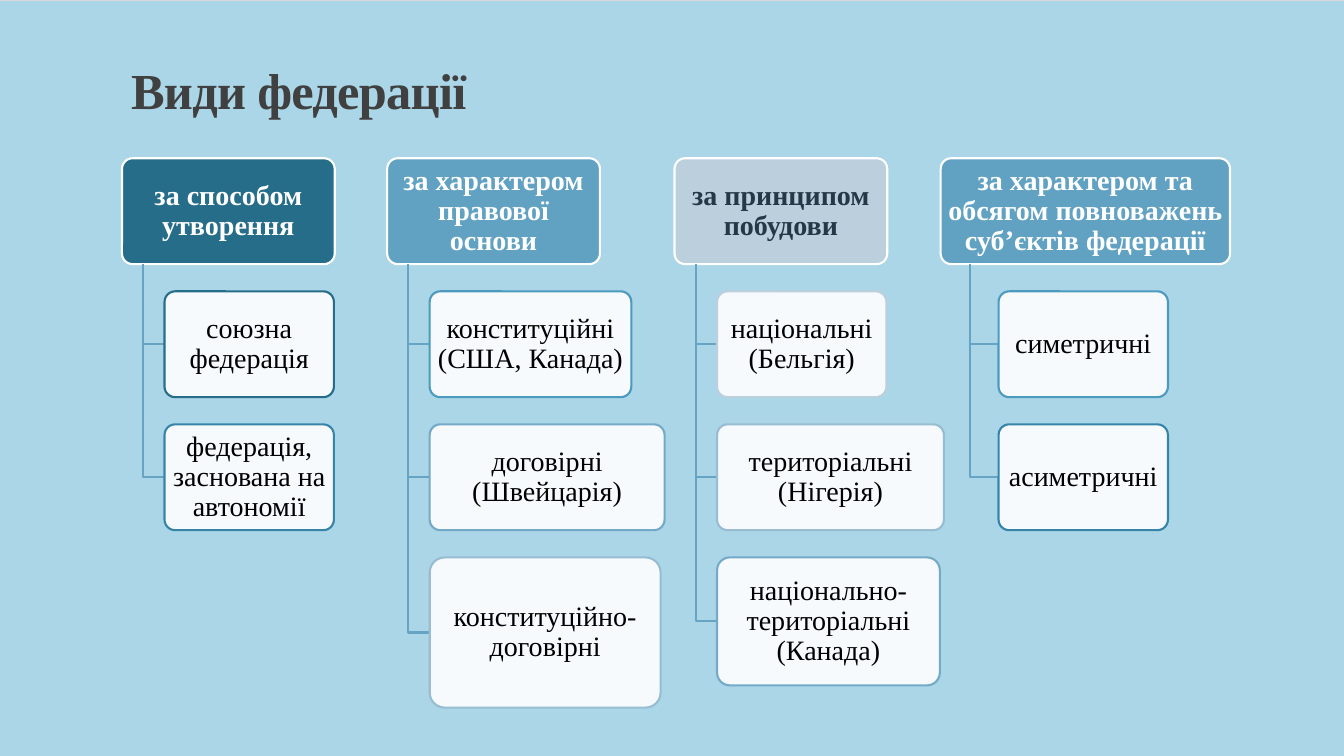
"""Build the slide on the kinds of federation: four headed branches of cards."""
import dataclasses

import lxml.etree
import pptx
import pptx.dml.color
import pptx.enum.dml
import pptx.enum.shapes
import pptx.enum.text
import pptx.oxml.ns
import pptx.util

Inches = pptx.util.Inches
Color = pptx.dml.color.RGBColor.from_string


@dataclasses.dataclass(frozen=True)
class Theme:
    font: str = "Times New Roman"
    title_size: int = 36
    card_size: int = 20
    line_width: float = 1.5
    background: str = "AAD6E7"
    background_lines: str = "D9D9D9"
    title: str = "404040"
    white: str = "FFFFFF"
    black: str = "000000"
    navy: str = "253848"
    elbow: str = "67A3C2"
    teal: str = "266D8A"
    deep: str = "3685A9"
    bright: str = "4D9ABF"
    blue: str = "61A2C3"
    soft: str = "74AAC7"
    pale: str = "98BCD1"
    mist: str = "BBCFDD"


theme = Theme()

TOP, ROW, HEIGHT = 1.57, 1.32, 1.05
HEADER_WIDTH, CARD_WIDTH = 2 * HEIGHT + 0.01, 1.6 * HEIGHT
STEM_SHARE, INDENT_SHARE = 0.1, 0.2

# Branch: left, width, fill, text colour, heading, cards (text, line, width, height)
branches = [
    (1.21, HEADER_WIDTH, theme.teal, theme.white, "за способом утворення", [
        ("союзна федерація", theme.teal, CARD_WIDTH, HEIGHT),
        ("федерація, заснована на автономії", theme.deep, CARD_WIDTH, HEIGHT),
    ]),
    (3.84, HEADER_WIDTH, theme.blue, theme.white, "за характером правової основи", [
        ("конституційні (США, Канада)", theme.bright, 2.0, HEIGHT),
        ("договірні (Швейцарія)", theme.soft, 2.33, HEIGHT),
        ("конституційно-договірні", theme.pale, 2.29, 1.49),
    ]),
    (6.69, HEADER_WIDTH, theme.mist, theme.navy, "за принципом побудови", [
        ("національні (Бельгія)", theme.mist, CARD_WIDTH, HEIGHT),
        ("територіальні (Нігерія)", theme.pale, 2.25, HEIGHT),
        ("національно-територіальні (Канада)", theme.soft, 2.21, 1.27),
    ]),
    (9.33, 2.87, theme.blue, theme.white,
     "за характером та обсягом повноважень суб’єктів федерації", [
         ("симетричні", theme.bright, CARD_WIDTH, HEIGHT),
         ("асиметричні", theme.deep, CARD_WIDTH, HEIGHT),
     ]),
]


def format_text(paragraph, size, color, bold):
    for run in paragraph.runs:
        run.font.name = theme.font
        run.font.size = pptx.util.Pt(size)
        run.font.bold = bold
        run.font.color.rgb = Color(color)


def add_card(slide, box, text, fill, line, color, bold):
    card = slide.shapes.add_shape(
        pptx.enum.shapes.MSO_SHAPE.ROUNDED_RECTANGLE, *map(Inches, box))
    card.adjustments[0] = 0.1
    card.shadow.inherit = False
    card.fill.solid()
    card.fill.fore_color.rgb = Color(fill)
    card.line.color.rgb = Color(line)
    card.line.width = pptx.util.Pt(theme.line_width)
    frame = card.text_frame
    frame.text = text
    frame.word_wrap = True
    frame.vertical_anchor = pptx.enum.text.MSO_ANCHOR.MIDDLE
    frame.margin_left = frame.margin_right = Inches(0.04)
    frame.margin_top = frame.margin_bottom = Inches(0.03)
    paragraph = frame.paragraphs[0]
    paragraph.alignment = pptx.enum.text.PP_ALIGN.CENTER
    paragraph.line_spacing = 0.9
    format_text(paragraph, theme.card_size, color, bold)
    return card


presentation = pptx.Presentation()
presentation.slide_width = Inches(13.33)
presentation.slide_height = Inches(7.5)
slide = presentation.slides.add_slide(presentation.slide_layouts.get_by_name("Title Only"))

background = slide.background.fill
background.patterned()
background.pattern = pptx.enum.dml.MSO_PATTERN.DARK_HORIZONTAL
background.fore_color.rgb = Color(theme.background)
background.back_color.rgb = Color(theme.background_lines)

title = slide.shapes.title
title.left, title.top, title.width, title.height = map(Inches, (1.2, 0.31, 11, 0.93))
title.text_frame.text = "Види федерації"
title.text_frame.word_wrap = True
title.text_frame.auto_size = pptx.enum.text.MSO_AUTO_SIZE.NONE
title.text_frame.vertical_anchor = pptx.enum.text.MSO_ANCHOR.BOTTOM
heading = title.text_frame.paragraphs[0]
heading.alignment = pptx.enum.text.PP_ALIGN.LEFT
heading.line_spacing = 0.85
format_text(heading, theme.title_size, theme.title, True)
heading.runs[0].font._element.set("spc", "-50")

for left, width, fill, color, text, cards in branches:
    add_card(slide, (left, TOP, width, HEIGHT), text, fill, theme.white, color, True)
    stem = left + STEM_SHARE * width
    card_left = left + INDENT_SHARE * width
    for row, (card_text, line, card_width, card_height) in enumerate(cards, start=1):
        card_top = TOP + row * ROW
        middle = card_top + card_height / 2
        builder = slide.shapes.build_freeform(Inches(stem), Inches(TOP + HEIGHT))
        builder.add_line_segments(
            [(Inches(stem), Inches(middle)), (Inches(card_left), Inches(middle))], close=False)
        elbow = builder.convert_to_shape()
        elbow.shadow.inherit = False
        elbow.fill.background()
        elbow.line.color.rgb = Color(theme.elbow)
        elbow.line.width = pptx.util.Pt(theme.line_width)

        card = add_card(slide, (card_left, card_top, card_width, card_height),
                        card_text, theme.white, line, theme.black, False)
        white = card._element.spPr.find(pptx.oxml.ns.qn("a:solidFill"))[0]
        lxml.etree.SubElement(white, pptx.oxml.ns.qn("a:alpha"), val="90000")

presentation.save("out.pptx")
